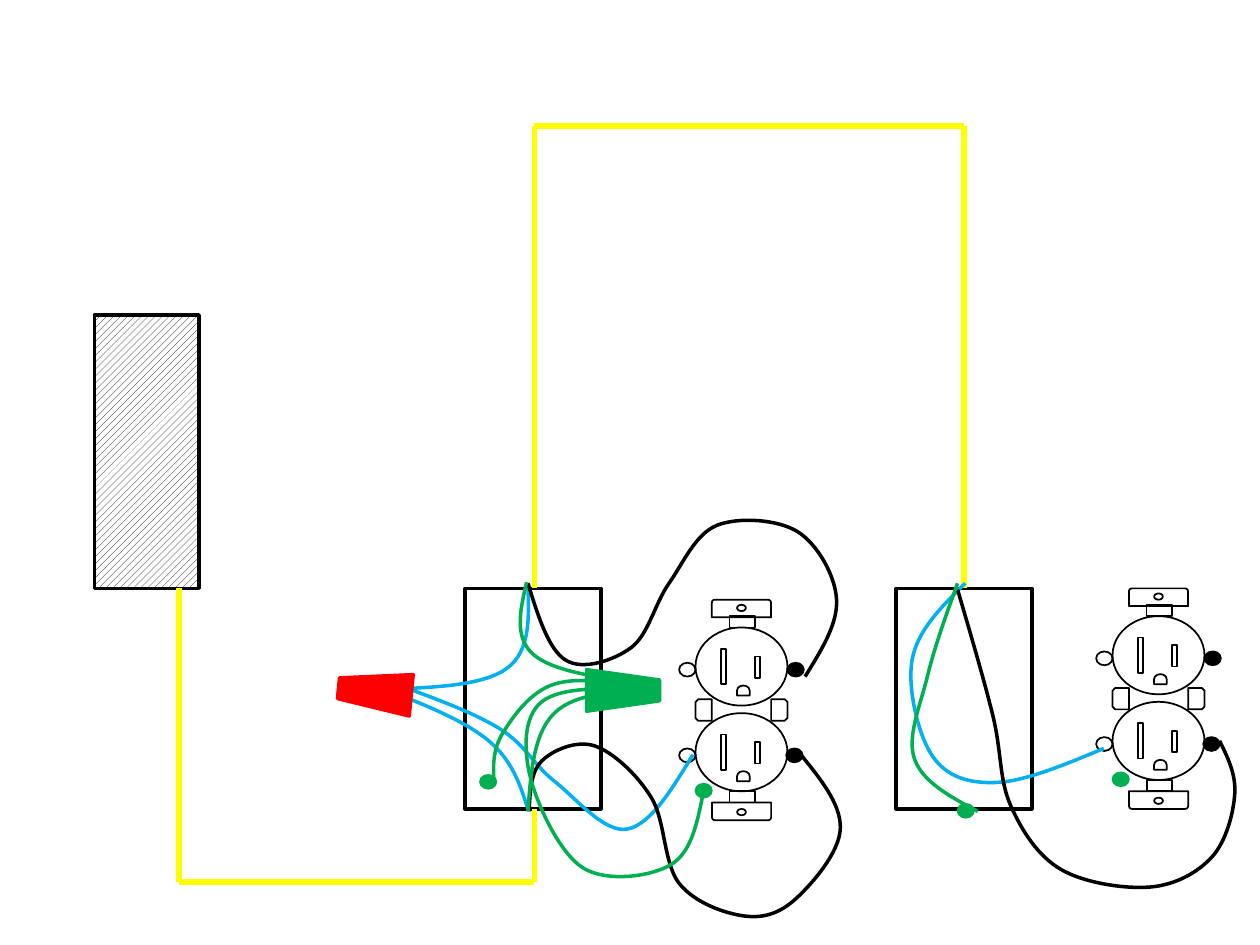
"""Draw a wiring diagram: a panel feeding two outlet boxes with their duplex receptacles."""
from pptx import Presentation
from pptx.dml.color import RGBColor
from pptx.enum.dml import MSO_PATTERN
from pptx.enum.shapes import MSO_CONNECTOR, MSO_SHAPE
from pptx.oxml.ns import qn
from pptx.oxml.xmlchemy import OxmlElement
from pptx.util import Inches, Pt

RECT = MSO_SHAPE.RECTANGLE
OVAL = MSO_SHAPE.OVAL
DELAY = MSO_SHAPE.FLOWCHART_DELAY
ROUND_TOP = MSO_SHAPE.ROUND_2_SAME_RECTANGLE
SNIP_TOP = MSO_SHAPE.SNIP_2_SAME_RECTANGLE
TRAPEZOID = MSO_SHAPE.TRAPEZOID
STRAIGHT = MSO_CONNECTOR.STRAIGHT
HATCH = MSO_PATTERN.WIDE_UPWARD_DIAGONAL

BLACK = RGBColor(0x00, 0x00, 0x00)
WHITE = RGBColor(0xFF, 0xFF, 0xFF)
YELLOW = RGBColor(0xFF, 0xFF, 0x00)
RED = RGBColor(0xFF, 0x00, 0x00)
GREEN = RGBColor(0x00, 0xB0, 0x50)
BLUE = RGBColor(0x00, 0xB0, 0xF0)


def add_part(shapes, kind, left, top, width, height, fill=None, turn=0, weight=1):
    part = shapes.add_shape(kind, Inches(left), Inches(top), Inches(width), Inches(height))
    part.rotation = turn
    part.shadow.inherit = False
    part.line.color.rgb = fill or BLACK
    part.line.width = Pt(weight)
    if fill is None:
        part.fill.background()
    else:
        part.fill.solid()
        part.fill.fore_color.rgb = fill
    return part


def add_wire(shapes, color, knots):
    """Run a smooth curve through the knots, with tangents set by each knot's neighbours."""
    slopes = [((c[0] - a[0]) / 6, (c[1] - a[1]) / 6) for a, c in zip(knots, knots[2:])]
    before = [(x - dx, y - dy) for (x, y), (dx, dy) in zip(knots[1:], slopes)]
    after = [(x + dx, y + dy) for (x, y), (dx, dy) in zip(knots[1:], slopes)]
    first = tuple((a + b) / 2 for a, b in zip(knots[0], before[0]))
    last = tuple((a + b) / 2 for a, b in zip(knots[-1], after[-1]))
    points = []
    for triple in zip([first] + after, before + [last], knots[1:]):
        points.extend((Inches(x), Inches(y)) for x, y in triple)

    builder = shapes.build_freeform(Inches(knots[0][0]), Inches(knots[0][1]))
    builder.add_line_segments(points, close=False)
    wire = builder.convert_to_shape()
    outline = wire._element.find(".//" + qn("a:path"))
    segments = outline.findall(qn("a:lnTo"))
    for start in range(0, len(segments), 3):
        curve = OxmlElement("a:cubicBezTo")
        for segment in segments[start:start + 3]:
            curve.append(segment[0])
            outline.remove(segment)
        outline.append(curve)
    wire.fill.background()
    wire.line.color.rgb = color
    wire.line.width = Pt(2)
    wire.shadow.inherit = False


deck = Presentation()
deck.slide_width = Inches(10)
deck.slide_height = Inches(7.5)
page = deck.slides.add_slide(deck.slide_layouts[6])
shapes = page.shapes

panel = add_part(shapes, RECT, 0.75, 2.5, 0.83, 2.17, weight=2)
panel.fill.patterned()
panel.fill.pattern = HATCH
panel.fill.fore_color.rgb = BLACK
panel.fill.back_color.rgb = WHITE

for box_left in (3.69, 7.11):
    add_part(shapes, RECT, box_left, 4.67, 1.08, 1.75, weight=2)

cable_runs = [
    [(1.42, 4.67), (1.42, 7), (4.24, 7), (4.24, 6.42)],
    [(4.24, 4.67), (4.24, 1), (7.65, 1), (7.65, 4.67)],
]
for run in cable_runs:
    for start, end in zip(run, run[1:]):
        cable = shapes.add_connector(STRAIGHT, *map(Inches, start + end))
        cable.line.color.rgb = YELLOW
        cable.line.width = Pt(3)
        cable._element.spPr.append(OxmlElement("a:effectLst"))

for left, top in ((8.7, 4.67), (5.39, 4.76)):
    outlet = shapes.add_group_shape().shapes
    for drop, hot_screw in ((0.68, 0.85), (0, 0.86)):
        face = top + drop
        add_part(outlet, OVAL, left + hot_screw, face + 0.5, 0.13, 0.11, BLACK)
        add_part(outlet, OVAL, left, face + 0.5, 0.13, 0.11)
        add_part(outlet, OVAL, left + 0.13, face + 0.22, 0.73, 0.62)
        add_part(outlet, RECT, left + 0.33, face + 0.39, 0.04, 0.28)
        add_part(outlet, RECT, left + 0.6, face + 0.45, 0.04, 0.17)
        add_part(outlet, DELAY, left + 0.47, face + 0.67, 0.08, 0.1, turn=270)
    for turn, strap, neck, hole in ((0, 0, 0.13, 0.04), (180, 1.61, 1.52, 1.66)):
        add_part(outlet, ROUND_TOP, left + 0.26, top + strap, 0.47, 0.14, turn=turn)
        add_part(outlet, RECT, left + 0.4, top + neck, 0.2, 0.09, turn=turn)
        add_part(outlet, OVAL, left + 0.46, top + hole, 0.07, 0.05, turn=turn)
    add_part(outlet, OVAL, left + 0.13, top + 1.46, 0.13, 0.11, GREEN)
    for turn, ear in ((90, 0.71), (270, 0.11)):
        add_part(outlet, SNIP_TOP, left + ear, top + 0.81, 0.17, 0.13, turn=turn)

neutral_splices = [
    [(4.19, 6.42), (3.88, 5.88), (3.06, 5.47)],
    [(4.19, 4.64), (4.03, 5.3), (3.11, 5.47)],
    [(3.14, 5.43), (3.96, 5.78), (4.4, 6.2), (4.98, 6.58), (5.5, 5.99)],
]
for knots in neutral_splices:
    add_wire(shapes, BLUE, knots)
add_part(shapes, TRAPEZOID, 2.81, 5.2, 0.33, 0.58, RED, 275.6, 2)

far_neutral = [(7.66, 4.63), (7.24, 5.23), (7.4, 6), (7.91, 6.21), (8.76, 5.94)]
add_wire(shapes, BLUE, far_neutral)

hot_wires = [
    [(4.2, 6.44), (4.3, 6.04), (4.72, 5.92), (5.17, 6.33), (5.39, 7.01),
     (5.91, 7.27), (6.32, 7.13), (6.67, 6.57), (6.34, 5.97)],
    [(6.39, 5.37), (6.64, 4.76), (6.33, 4.22), (5.69, 4.17), (5.31, 4.63),
     (5.01, 5.14), (4.49, 5.24), (4.19, 4.63)],
    [(7.6, 4.68), (7.88, 5.68), (8.02, 6.39), (8.42, 6.9), (9.13, 7.04),
     (9.62, 6.8), (9.8, 6.3), (9.68, 5.88)],
]
for knots in hot_wires:
    add_wire(shapes, BLACK, knots)

ground_splices = [
    [(4.19, 6.44), (4.4, 5.66), (5.18, 5.48)],
    [(4.18, 4.62), (4.24, 5.2), (5.16, 5.43)],
    [(5.14, 5.46), (4.4, 5.43), (3.99, 5.82), (3.92, 6.21)],
    [(5.09, 5.47), (4.3, 5.57), (4.21, 6.17), (4.63, 6.89), (5.33, 6.86), (5.58, 6.3)],
]
for knots in ground_splices:
    add_wire(shapes, GREEN, knots)
add_part(shapes, OVAL, 3.81, 6.15, 0.13, 0.11, GREEN)
add_part(shapes, TRAPEZOID, 4.78, 5.19, 0.33, 0.58, GREEN, 90, 2)

far_ground = [(7.6, 4.63), (7.36, 5.37), (7.26, 6.03), (7.76, 6.44)]
add_wire(shapes, GREEN, far_ground)
add_part(shapes, OVAL, 7.6, 6.38, 0.13, 0.11, GREEN)

deck.save("out.pptx")
